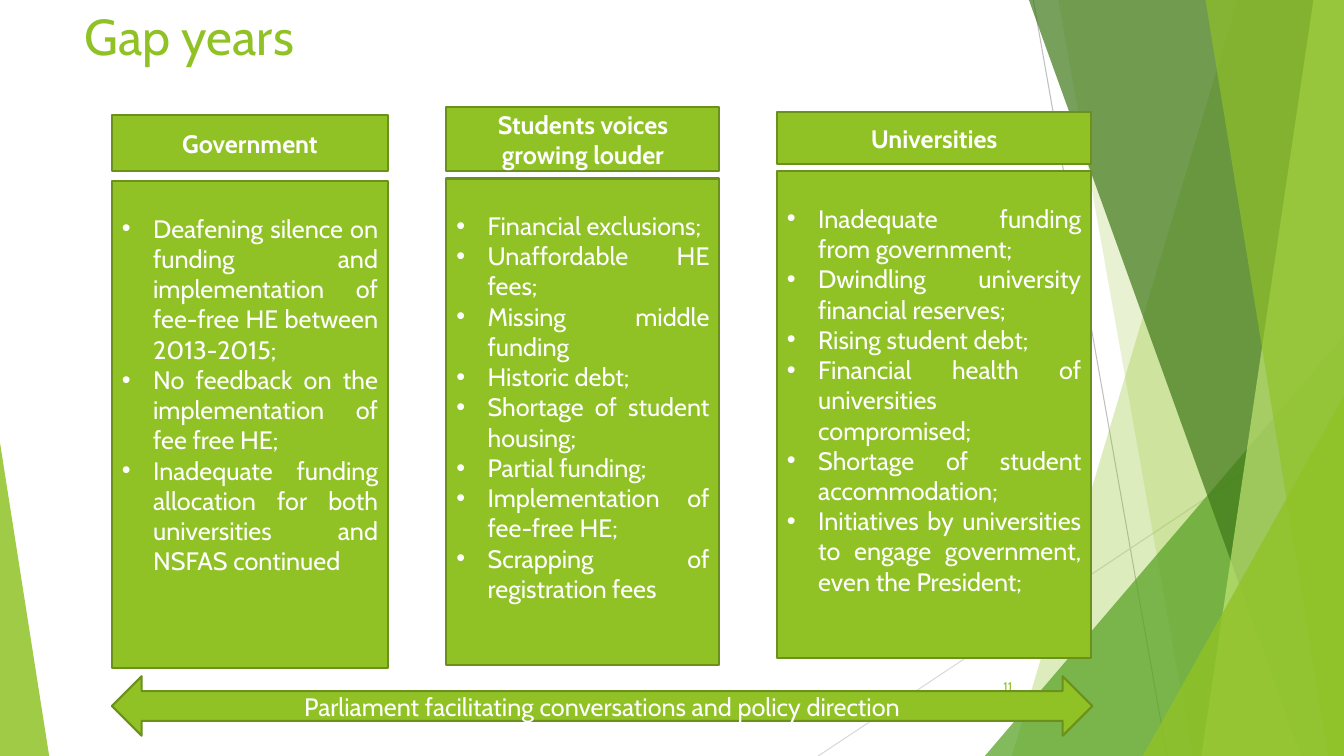
from lxml.etree import SubElement
from pptx import Presentation
from pptx.dml.color import RGBColor
from pptx.enum.shapes import MSO_CONNECTOR as Link, MSO_SHAPE as Preset
from pptx.enum.text import MSO_ANCHOR as Anchor, PP_ALIGN as Align
from pptx.oxml.ns import qn
from pptx.util import Cm, Pt

WIDTH, HEIGHT = 33.87, 19.05
COLOURS = {
    "green": "90C226", "edge": "6B901C", "leaf": "54A021", "forest": "3F7819",
    "lime": "C0E474", "white": "FFFFFF", "grey": "BFBFBF", "pale": "D9D9D9",
}


def colour(name):
    return RGBColor.from_string(COLOURS[name])


def write(frame, lines, size=18, ink="white", bold=False, align=Align.CENTER,
          anchor=Anchor.MIDDLE, bullet=None, top=0.13, font="Cabin"):
    frame.word_wrap = True
    frame.vertical_anchor = anchor
    frame.margin_left = frame.margin_right = Cm(0.25)
    frame.margin_top, frame.margin_bottom = Cm(top), Cm(0.13)
    for index, line in enumerate(lines):
        para = frame.add_paragraph() if index else frame.paragraphs[0]
        para.alignment = align
        span = para.add_run()
        span.text = line
        span.font.name, span.font.size, span.font.bold = font, Pt(size), bold
        span.font.color.rgb = colour(ink)
        if bullet:
            props = para._p.get_or_add_pPr()
            props.set("marL", str(Cm(0.79)))
            props.set("indent", str(-Cm(0.79)))
            SubElement(props, qn("a:buFont")).set("typeface", "Arial")
            SubElement(props, qn("a:buChar")).set("char", bullet)


class Page:
    def __init__(self, deck, fill="green", edge="edge"):
        self.slide = deck.slides.add_slide(deck.slide_layouts[5])
        self.shapes = self.slide.shapes
        self.fill, self.edge = fill, edge

    def title(self, text, *place):
        box = self.shapes.title
        box.left, box.top, box.width, box.height = map(Cm, place)
        write(box.text_frame, [text], size=36, ink=self.fill,
              align=Align.LEFT, anchor=Anchor.TOP)

    def label(self, text, *place, **style):
        box = self.shapes.add_textbox(*map(Cm, place))
        write(box.text_frame, [text], **style)

    def box(self, lines, *place, preset=Preset.RECTANGLE, **style):
        box = self.shapes.add_shape(preset, *map(Cm, place))
        box.shadow.inherit = False
        box.fill.solid()
        box.fill.fore_color.rgb = colour(self.fill)
        box.line.color.rgb = colour(self.edge)
        box.line.width = Pt(1.5)
        write(box.text_frame, lines, **style)

    def line(self, ink, *ends):
        line = self.shapes.add_connector(Link.STRAIGHT, *map(Cm, ends))
        line.line.color.rgb = colour(ink)
        line.line.width = Pt(0.75)
        SubElement(line._element.spPr, qn("a:effectLst"))

    def tint(self, shape, ink, opacity):
        shape.shadow.inherit = False
        shape.line.fill.background()
        shape.fill.solid()
        shape.fill.fore_color.rgb = colour(ink)
        tone = shape._element.spPr.find(qn("a:solidFill"))[0]
        SubElement(tone, qn("a:alpha")).set("val", str(opacity * 1000))

    def band(self, upper, lower, ink, opacity):
        corners = [(WIDTH, 0), (WIDTH, HEIGHT), (lower, HEIGHT)]
        outline = self.shapes.build_freeform(Cm(upper), 0)
        outline.add_line_segments([(Cm(x), Cm(y)) for x, y in corners], close=True)
        self.tint(outline.convert_to_shape(), ink, opacity)

    def wedge(self, left, top, width, apex, ink, opacity):
        wedge = self.shapes.add_shape(
            Preset.ISOSCELES_TRIANGLE, Cm(left), Cm(top), Cm(width), Cm(HEIGHT - top))
        wedge.adjustments[0] = apex
        self.tint(wedge, ink, opacity)


def draw_backdrop(page):
    page.line("grey", 26.04, 0, 29.41, HEIGHT)
    page.line("pale", WIDTH, 10.24, 20.62, HEIGHT)
    page.band(31.19, 25.5, "green", 30)
    page.band(26.67, 30.05, "green", 20)
    page.wedge(24.82, 8.46, WIDTH - 24.82, 1, "leaf", 72)
    page.band(25.93, 32.79, "forest", 70)
    page.band(33.1, 30.28, "lime", 70)
    page.band(30.38, 33.48, "green", 65)
    page.wedge(28.8, 9.98, WIDTH - 28.8, 1, "green", 80)
    page.wedge(0, 11.15, 1.24, 0, "green", 85)


COLUMNS = [
    ("Government", 2.82, 6.96, 2.9, 1.42, 4.57, [
        "Deafening silence on funding and implementation of fee-free HE between 2013-2015;",
        "No feedback on the implementation of fee free HE;",
        "Inadequate funding allocation for both universities and NSFAS continued",
    ]),
    ("Students voices growing louder", 11.25, 6.88, 2.69, 1.63, 4.5, [
        "Financial exclusions;",
        "Unaffordable HE fees;",
        "Missing middle funding",
        "Historic debt;",
        "Shortage of student housing;",
        "Partial funding;",
        "Implementation of fee-free HE;",
        "Scrapping of registration fees",
    ]),
    ("Universities", 19.58, 7.92, 2.82, 1.32, 4.32, [
        "Inadequate funding from government;",
        "Dwindling university financial reserves;",
        "Rising student debt;",
        "Financial health of universities compromised;",
        "Shortage of student accommodation;",
        "Initiatives by universities to engage government, even the President;",
    ]),
]


def main():
    deck = Presentation()
    deck.slide_width, deck.slide_height = Cm(WIDTH), Cm(HEIGHT)
    page = Page(deck)
    draw_backdrop(page)
    page.title("Gap years", 1.88, 0, 23.88, 1.93)
    page.label("11", 23.85, 16.79, 1.91, 1.02, size=9, ink="green", align=Align.RIGHT)
    for heading, left, width, head_top, head_height, list_top, points in COLUMNS:
        page.box(points, left, list_top, width, 12.27, align=Align.JUSTIFY,
                 anchor=Anchor.TOP, bullet="•", top=0.8)
        page.box([heading], left, head_top, width, head_height, bold=True)
    page.box(["Parliament facilitating conversations and policy direction"],
             2.82, 17.04, 24.71, 1.5, preset=Preset.LEFT_RIGHT_ARROW)
    deck.save("out.pptx")


if __name__ == "__main__":
    main()
